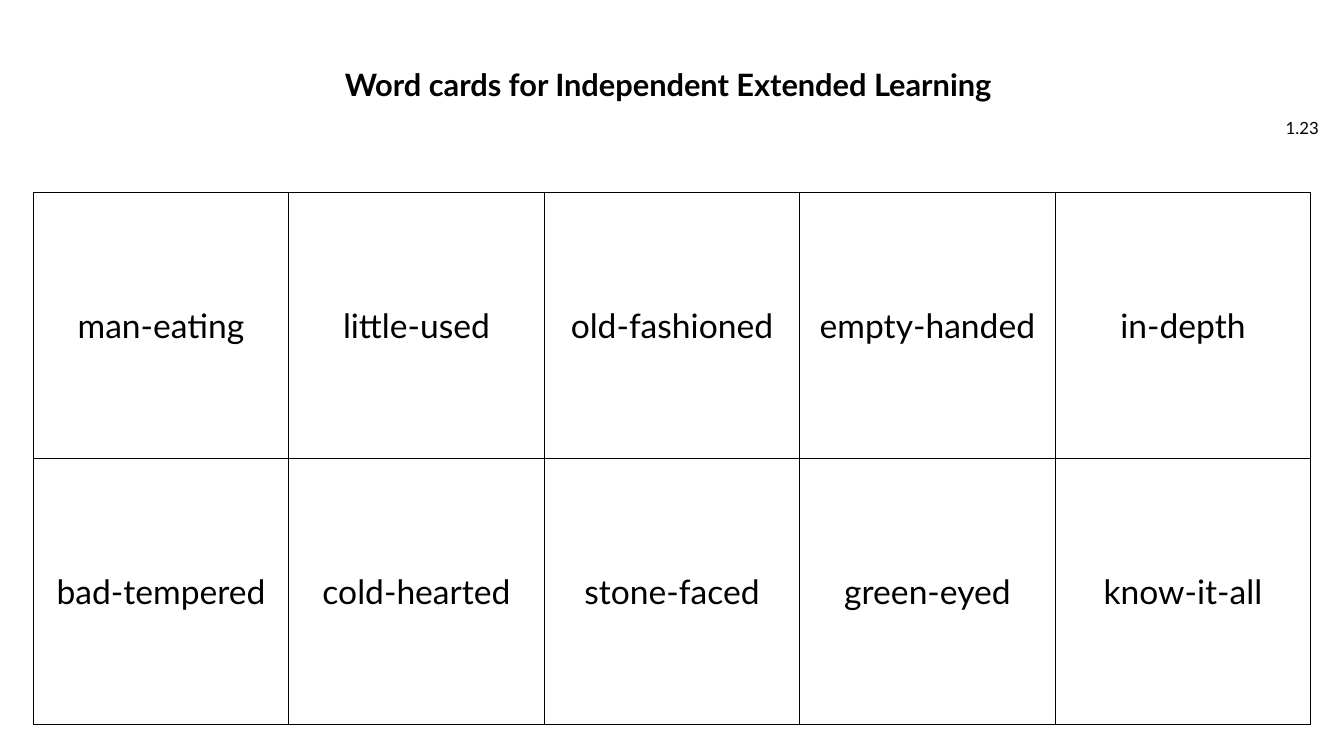
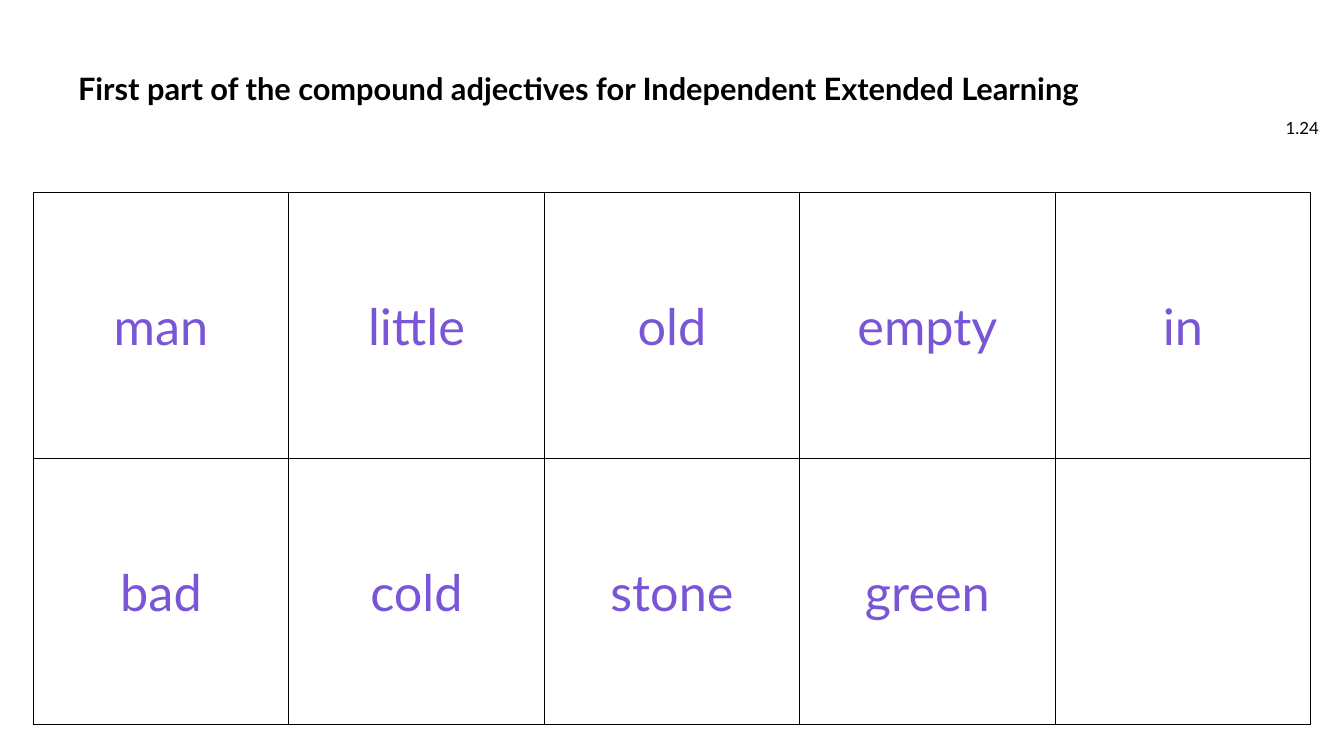
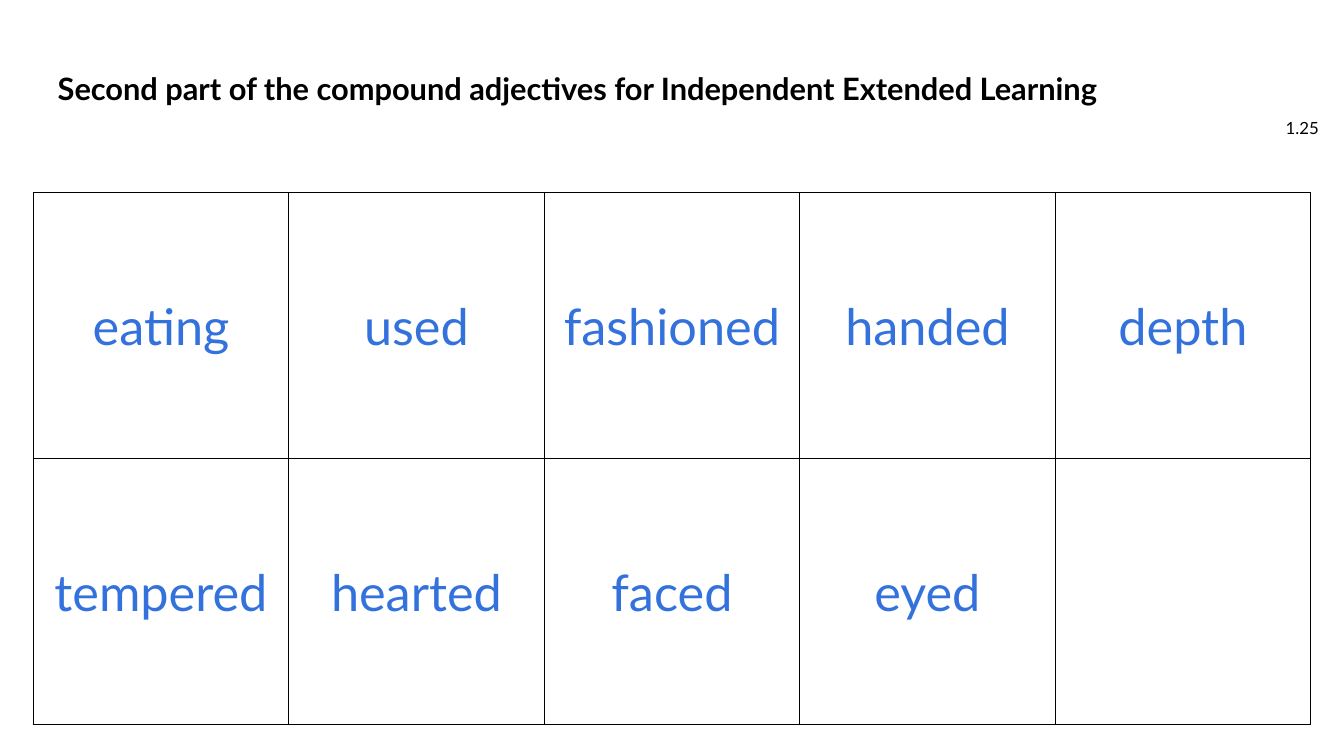
from pptx import Presentation
from pptx.dml.color import RGBColor
from pptx.enum.text import MSO_ANCHOR, PP_ALIGN
from pptx.oxml import parse_xml
from pptx.oxml.ns import nsdecls
from pptx.util import Inches, Pt

FONT = "Lato"
BLACK = RGBColor(0x00, 0x00, 0x00)
PURPLE = RGBColor(0x79, 0x56, 0xD6)
BLUE = RGBColor(0x33, 0x72, 0xDC)
ROWS, COLUMNS = 2, 5
TABLE_WIDTH, TABLE_HEIGHT = 12.67, 5.28

CARD_SLIDES = [
    ("Word cards for Independent Extended Learning ", 2.31, 8.71, 0.9, "1.23", 24, BLACK,
     [["man-eating", "little-used", "old-fashioned", "empty-handed", "in-depth"],
      ["bad-tempered", "cold-hearted", "stone-faced", "green-eyed", "know-it-all"]]),
    ("First part of the compound adjectives for Independent Extended Learning ",
     0.5, 10.55, 1.0, "1.24", 36, PURPLE,
     [["man", "little", "old", "empty", "in"],
      ["bad", "cold", "stone", "green", ""]]),
    ("Second part of the compound adjectives for Independent Extended Learning ",
     0.47, 10.59, 1.0, "1.25", 36, BLUE,
     [["eating", "used", "fashioned", "handed", "depth"],
      ["tempered", "hearted", "faced", "eyed", ""]]),
]


def write_text(frame, text, size, color, alignment, bold=False):
    paragraph = frame.paragraphs[0]
    paragraph.text = text
    paragraph.alignment = alignment
    paragraph.font.name = FONT
    paragraph.font.size = Pt(size)
    paragraph.font.bold = bold
    paragraph.font.color.rgb = color
    return paragraph


def add_borders(cell):
    properties = cell._tc.get_or_add_tcPr()
    for position, side in enumerate(("lnL", "lnR", "lnT", "lnB")):
        properties.insert(position, parse_xml(
            f'<a:{side} {nsdecls("a")} w="{Pt(1)}"><a:solidFill>'
            f'<a:srgbClr val="{BLACK}"/></a:solidFill></a:{side}>'))


presentation = Presentation()
presentation.slide_width = Inches(13.33)
presentation.slide_height = Inches(7.5)

for title, left, width, spacing, number, size, color, words in CARD_SLIDES:
    slide = presentation.slides.add_slide(presentation.slide_layouts[6])

    number_box = slide.shapes.add_textbox(Inches(12.55), Inches(1.07), Inches(0.63), Inches(0.4))
    number_box.text_frame.word_wrap = True
    number_box.text_frame.vertical_anchor = MSO_ANCHOR.MIDDLE
    write_text(number_box.text_frame, number, 12, BLACK, PP_ALIGN.RIGHT)

    title_box = slide.shapes.add_textbox(Inches(left), Inches(0.64), Inches(width), Inches(0.35))
    title_box.text_frame.word_wrap = True
    paragraph = write_text(title_box.text_frame, title, 22, BLACK, PP_ALIGN.CENTER, bold=True)
    paragraph.line_spacing = spacing

    table = slide.shapes.add_table(
        ROWS, COLUMNS, Inches(0.33), Inches(1.91), Inches(TABLE_WIDTH), Inches(TABLE_HEIGHT)).table
    table.first_row = False
    table.horz_banding = False
    for row, row_words in enumerate(words):
        for column, word in enumerate(row_words):
            cell = table.cell(row, column)
            cell.fill.background()
            cell.vertical_anchor = MSO_ANCHOR.MIDDLE
            add_borders(cell)
            write_text(cell.text_frame, word, size, color, PP_ALIGN.CENTER)

presentation.save("out.pptx")
